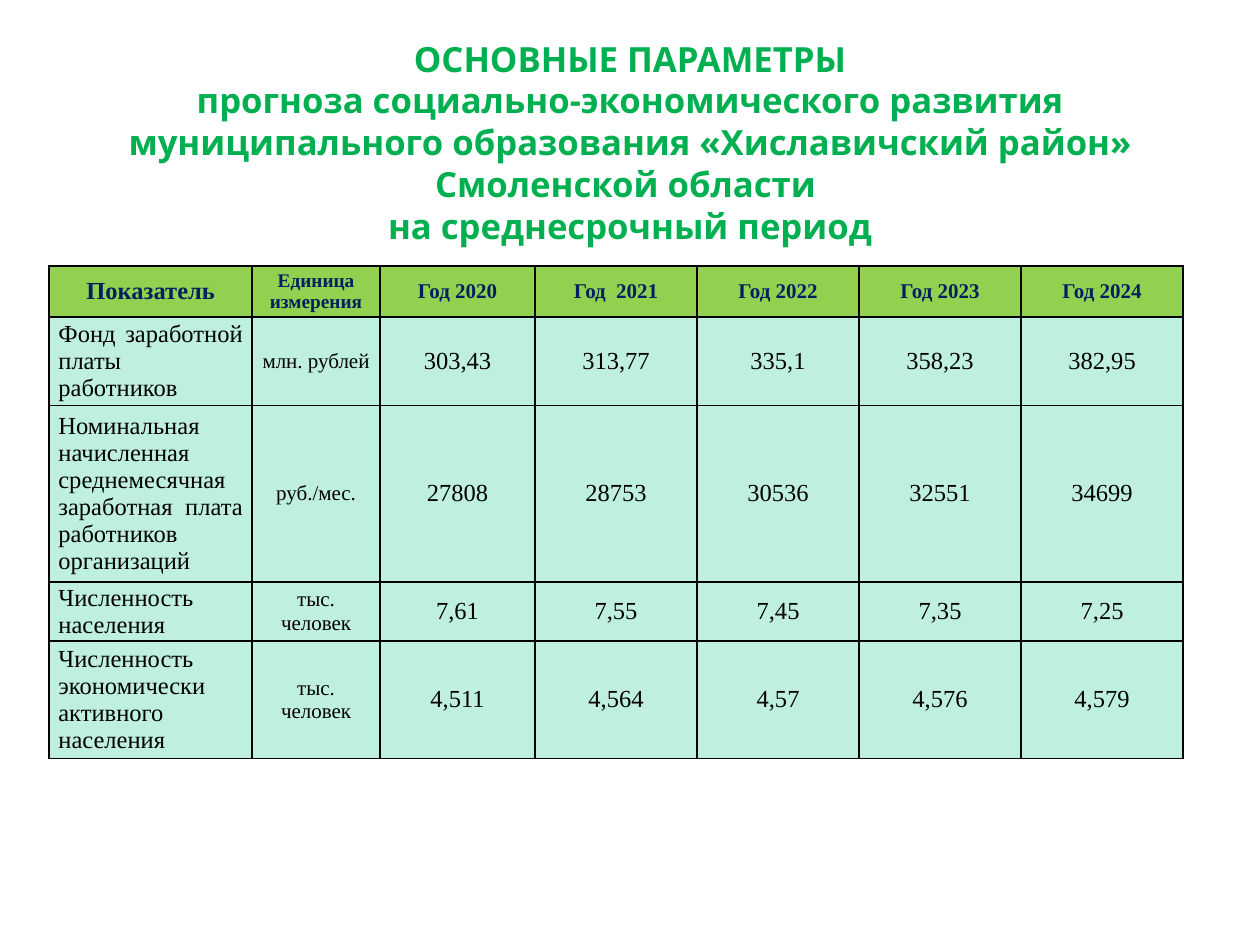
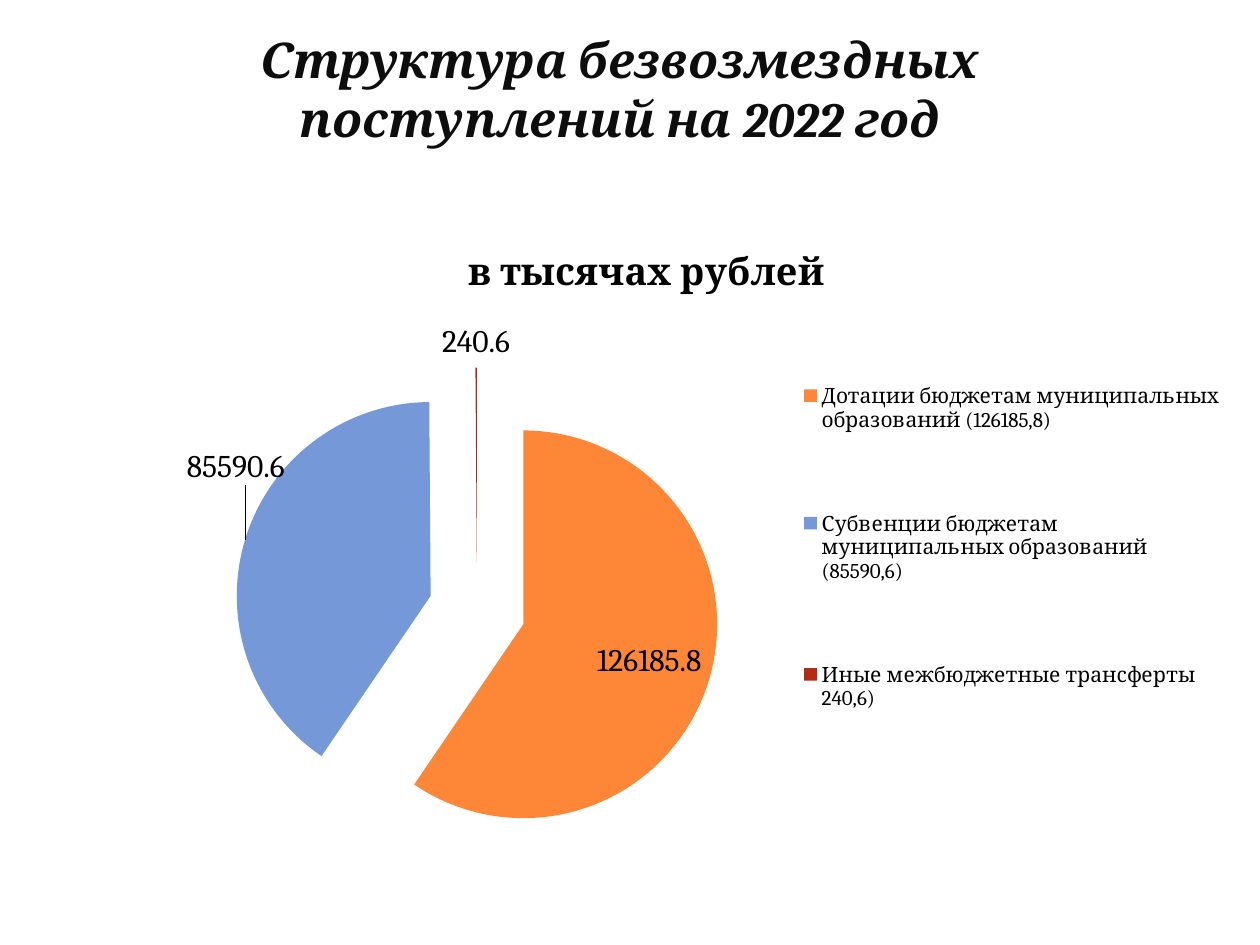
import pptx
import pptx.util
import pptx.chart.data
import pptx.dml.color
import pptx.enum.chart
import pptx.enum.shapes
import pptx.enum.text
import pptx.oxml
import pptx.oxml.ns

Pt = pptx.util.Pt
RGB = pptx.dml.color.RGBColor.from_string
ALIGN = pptx.enum.text.PP_ALIGN
MIDDLE = pptx.enum.text.MSO_ANCHOR.MIDDLE
XL = pptx.enum.chart

COLORS = {
    "title": "00B050", "heading": "0D0D0D", "text": "000000",
    "head_text": "002060", "head_fill": "92D050", "body_fill": "BFEFDF",
    "grants": "FE8637", "subventions": "7598D9", "transfers": "B32C16",
}


def set_text(tf, text, size, color, font, bold=False, italic=False,
             align=ALIGN.CENTER, spacing=None):
    tf.word_wrap = True
    p = tf.paragraphs[0]
    p.text = text
    p.alignment = align
    if spacing:
        p.line_spacing = Pt(spacing)
    for r in p.runs:
        r.font.name = font
        r.font.size = Pt(size)
        r.font.bold = bold
        r.font.italic = italic
        r.font.color.rgb = RGB(COLORS[color])


def set_layout(parent, x, y, w=None, h=None, inner=False):
    ns = pptx.oxml.ns.nsdecls("c")
    target = '<c:layoutTarget val="inner"/>' if inner else ""
    modes = '<c:xMode val="edge"/><c:yMode val="edge"/>'
    size = f'<c:w val="{w}"/><c:h val="{h}"/>' if w else ""
    layout = pptx.oxml.parse_xml(
        f'<c:layout {ns}><c:manualLayout>{target}{modes}'
        f'<c:x val="{x}"/><c:y val="{y}"/>{size}</c:manualLayout></c:layout>')
    for old in parent.findall(pptx.oxml.ns.qn("c:layout")):
        parent.remove(old)
    before = [e for e in parent if e.tag in (
        pptx.oxml.ns.qn("c:tx"), pptx.oxml.ns.qn("c:legendPos"))]
    parent.insert(len(before), layout)


prs = pptx.Presentation()
prs.slide_width = Pt(720)
prs.slide_height = Pt(540)
blank = prs.slide_layouts[6]

slide = prs.slides.add_slide(blank)
sp = slide.shapes.add_textbox(Pt(36), Pt(21.6), Pt(648), Pt(118.8))
tf = sp.text_frame
tf.vertical_anchor = MIDDLE
tf.margin_top = tf.margin_bottom = 0
set_text(tf, "ОСНОВНЫЕ ПАРАМЕТРЫ\vпрогноза социально-экономического развития "
         "муниципального образования «Хиславичский район» Смоленской области "
         "\vна среднесрочный период",
         19.8, "title", "Open Sans", bold=True, spacing=23.9)

rows = [
    ["Показатель", "Единица измерения", "Год 2020", "Год  2021", "Год 2022",
     "Год 2023", "Год 2024"],
    ["Фонд заработной платы работников", "млн. рублей",
     "303,43", "313,77", "335,1", "358,23", "382,95"],
    ["Номинальная начисленная среднемесячная заработная плата работников "
     "организаций", "руб./мес.", "27808", "28753", "30536", "32551", "34699"],
    ["Численность населения", "тыс. человек",
     "7,61", "7,55", "7,45", "7,35", "7,25"],
    ["Численность экономически активного населения", "тыс. человек",
     "4,511", "4,564", "4,57", "4,576", "4,579"],
]
col_widths = [116, 73.1, 88.6] + [92.6] * 4
row_height = 29.2
head_sizes = [14, 11] + [12] * 5
body_sizes = [14, 12] + [14] * 5

table = slide.shapes.add_table(
    len(rows), len(col_widths), Pt(28.1), Pt(152),
    Pt(sum(col_widths)), Pt(row_height * len(rows))).table
table.first_row = False
table.horz_banding = False
for column, width in zip(table.columns, col_widths):
    column.width = Pt(width)
for i, values in enumerate(rows):
    head = i == 0
    for j, value in enumerate(values):
        cell = table.cell(i, j)
        cell.vertical_anchor = MIDDLE
        cell.margin_left = cell.margin_right = Pt(5.3)
        cell.margin_top = cell.margin_bottom = 0
        align = ALIGN.CENTER
        if j == 0 and not head:
            align = ALIGN.LEFT if i == len(rows) - 1 else ALIGN.JUSTIFY
        set_text(cell.text_frame, value, (head_sizes if head else body_sizes)[j],
                 "head_text" if head else "text", "Times New Roman",
                 bold=head, align=align)
        tcPr = cell._tc.get_or_add_tcPr()
        for side in ("lnL", "lnR", "lnT", "lnB"):
            tcPr.append(pptx.oxml.parse_xml(
                f'<a:{side} {pptx.oxml.ns.nsdecls("a")} w="{Pt(1)}"><a:solidFill>'
                f'<a:srgbClr val="{COLORS["text"]}"/></a:solidFill></a:{side}>'))
        cell.fill.solid()
        cell.fill.fore_color.rgb = RGB(COLORS["head_fill" if head else "body_fill"])

slide = prs.slides.add_slide(blank)
sp = slide.shapes.add_shape(pptx.enum.shapes.MSO_SHAPE.ROUNDED_RECTANGLE,
                            Pt(56.2), Pt(22.3), Pt(596.2), Pt(90))
sp.shadow.inherit = False
sp.fill.background()
sp.line.fill.background()
tf = sp.text_frame
tf.vertical_anchor = MIDDLE
tf.margin_bottom = Pt(37.2)
set_text(tf, "Структура безвозмездных поступлений на 2022 год",
         28, "heading", "Cambria", bold=True, italic=True)

data = pptx.chart.data.CategoryChartData()
data.categories = [
    "Дотации бюджетам муниципальных образований (126185,8)",
    "Субвенции бюджетам муниципальных образований (85590,6)",
    "Иные межбюджетные трансферты 240,6)",
]
data.add_series("в тысячах рублей", [126185.8, 85590.6, 240.6])
chart = slide.shapes.add_chart(
    XL.XL_CHART_TYPE.PIE_EXPLODED, Pt(36), Pt(126), Pt(667.4), Pt(370.8), data).chart
chart.font.name = "Cambria"
chart.font.size = Pt(18)
chart.font.color.rgb = RGB(COLORS["text"])
chart.has_title = True
set_text(chart.chart_title.text_frame, "в тысячах рублей", 21.6, "text", "Cambria",
         bold=True)
chart.has_legend = True
chart.legend.position = XL.XL_LEGEND_POSITION.RIGHT
chart.legend.include_in_layout = False
chart.legend.font.size = Pt(12)
chart.legend.font.name = "Cambria"

plot = chart.plots[0]
plot.vary_by_categories = True
series = plot.series[0]
for explosion in series._element.findall(pptx.oxml.ns.qn("c:explosion")):
    explosion.set("val", "25")
labels = series.data_labels
labels.show_value = True
labels.number_format = "General"
labels.number_format_is_linked = False
labels.position = XL.XL_LABEL_POSITION.OUTSIDE_END
for i, name in enumerate(("grants", "subventions", "transfers")):
    fill = series.points[i].format.fill
    fill.solid()
    fill.fore_color.rgb = RGB(COLORS[name])
    dPt = series._element.findall(pptx.oxml.ns.qn("c:dPt"))[i]
    dPt.find(pptx.oxml.ns.qn("c:spPr")).addprevious(pptx.oxml.parse_xml(
        f'<c:explosion {pptx.oxml.ns.nsdecls("c")} val="25"/>'))
series.points[0].data_label.position = XL.XL_LABEL_POSITION.INSIDE_END
series.points[1].data_label.position = XL.XL_LABEL_POSITION.OUTSIDE_END
dLbl = series._element.findall(".//" + pptx.oxml.ns.qn("c:dLbl"))[1]
dLbl.insert(1, pptx.oxml.parse_xml(
    f'<c:layout {pptx.oxml.ns.nsdecls("c")}><c:manualLayout>'
    '<c:x val="0.04"/><c:y val="-0.08"/></c:manualLayout></c:layout>'))

set_layout(chart.chart_title._element, 0.341, 0.03)
set_layout(chart.legend._element, 0.63, 0.13, 0.365, 0.75)
set_layout(chart._chartSpace.chart.plotArea, 0.147, 0.227, 0.415, 0.747, inner=True)

prs.save("out.pptx")
